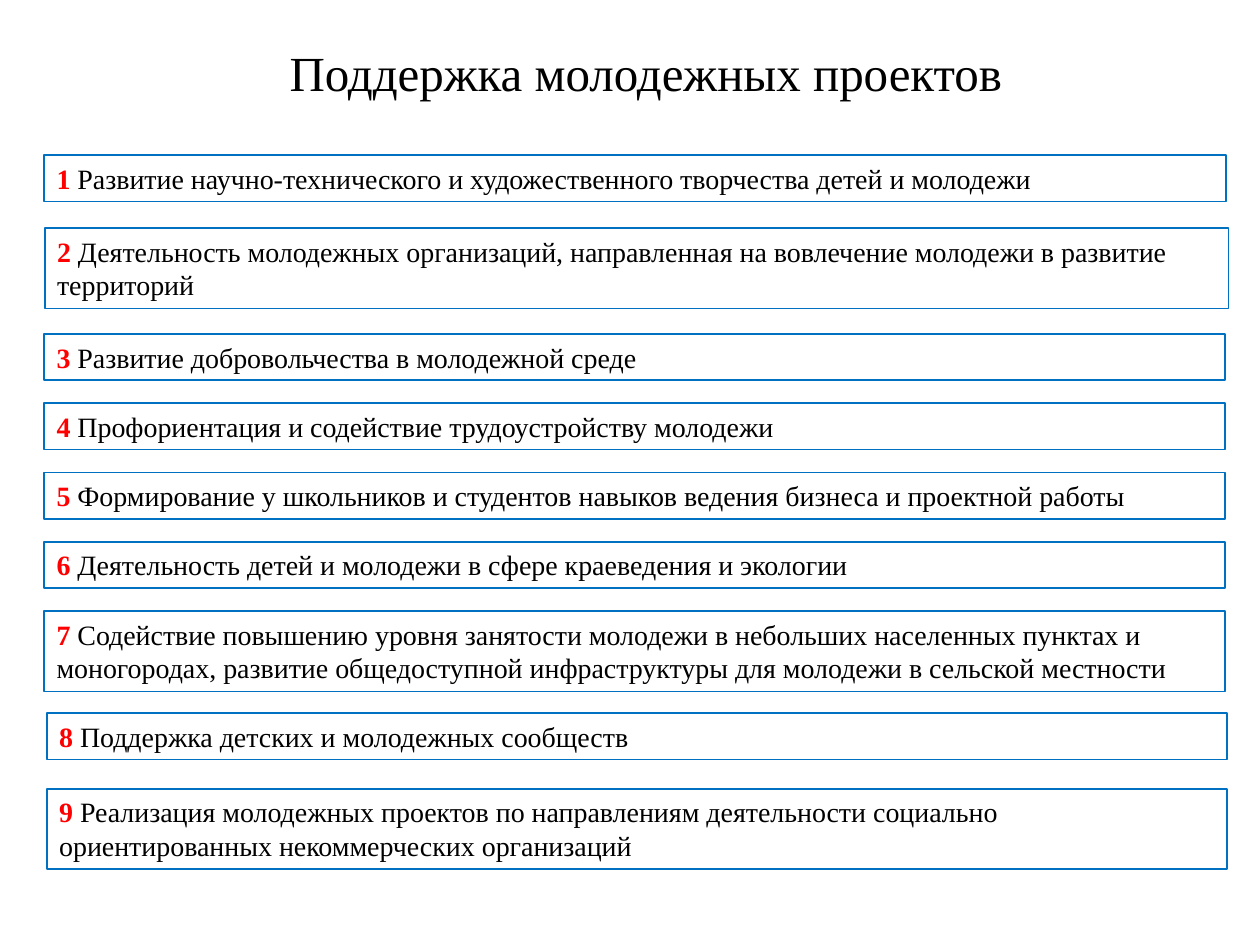
from pptx import Presentation
from pptx.dml.color import RGBColor
from pptx.enum.text import MSO_ANCHOR, MSO_AUTO_SIZE, PP_ALIGN
from pptx.util import Pt

COLOURS = {"text": "000000", "number": "FF0000", "border": "0070C0"}
FONT = "Times New Roman"
LINE_HEIGHT = 19.4
PADDING = 7.2

DIRECTIONS = [
    (25.2, 88.6, 675.4, 1, "Развитие научно-технического и художественного творчества детей и молодежи"),
    (25.5, 130.3, 676.5, 2, "Деятельность молодежных организаций, направленная на вовлечение молодежи "
                            "в развитие территорий"),
    (25.2, 190.8, 674.8, 1, "Развитие добровольчества в молодежной среде"),
    (25.2, 230.4, 674.8, 1, "Профориентация и содействие трудоустройству молодежи"),
    (25.2, 270, 674.8, 1, "Формирование у школьников и студентов навыков ведения бизнеса и проектной работы"),
    (25.2, 309.6, 674.8, 1, "Деятельность детей и молодежи в сфере краеведения и экологии"),
    (25.2, 349.2, 674.8, 2, "Содействие повышению уровня занятости молодежи в небольших населенных пунктах "
                            "и моногородах, развитие общедоступной инфраструктуры для молодежи "
                            "в сельской местности"),
    (26.7, 407.5, 674.6, 1, "Поддержка детских и молодежных сообществ"),
    (26.7, 450.7, 674.6, 2, "Реализация молодежных проектов по направлениям деятельности социально "
                            "ориентированных некоммерческих организаций"),
]


class SlideBuilder:
    def __init__(self, deck):
        self.page = deck.slides.add_slide(deck.slide_layouts[5])

    def colour(self, name):
        return RGBColor.from_string(COLOURS[name])

    def style(self, span, size, colour, bold=False):
        span.font.name = FONT
        span.font.size = Pt(size)
        span.font.bold = bold
        span.font.color.rgb = self.colour(colour)

    def fit(self, frame):
        frame.word_wrap = True
        frame.auto_size = MSO_AUTO_SIZE.SHAPE_TO_FIT_TEXT
        frame.vertical_anchor = MSO_ANCHOR.TOP

    def title(self, text, left, top, width, height):
        box = self.page.shapes.title
        box.left, box.top, box.width, box.height = Pt(left), Pt(top), Pt(width), Pt(height)
        self.fit(box.text_frame)
        box.text_frame.text = text
        para = box.text_frame.paragraphs[0]
        para.alignment = PP_ALIGN.CENTER
        self.style(para.runs[0], 28, "text")

    def numbered_box(self, number, text, left, top, width, lines):
        height = lines * LINE_HEIGHT + PADDING
        box = self.page.shapes.add_textbox(Pt(left), Pt(top), Pt(width), Pt(height))
        box.line.color.rgb = self.colour("border")
        box.line.width = Pt(1)
        self.fit(box.text_frame)
        para = box.text_frame.paragraphs[0]
        para.text = f"{number} "
        self.style(para.runs[0], 16, "number", bold=True)
        span = para.add_run()
        span.text = text
        self.style(span, 16, "text")


def main():
    deck = Presentation()
    deck.slide_width, deck.slide_height = Pt(720), Pt(540)
    builder = SlideBuilder(deck)
    builder.title("Поддержка молодежных проектов", 122.4, 20.9, 493.2, 41)
    for number, (left, top, width, lines, text) in enumerate(DIRECTIONS, start=1):
        builder.numbered_box(number, text, left, top, width, lines)
    deck.save("out.pptx")


if __name__ == "__main__":
    main()
